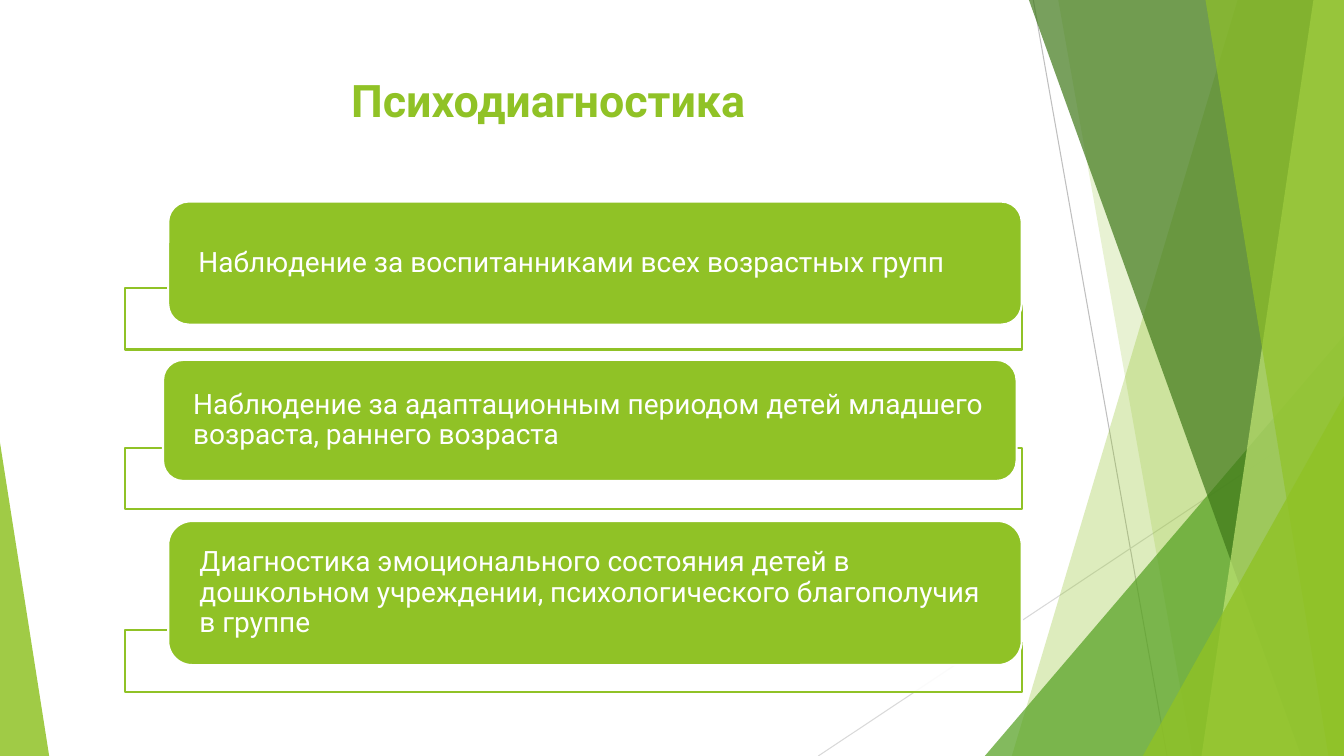
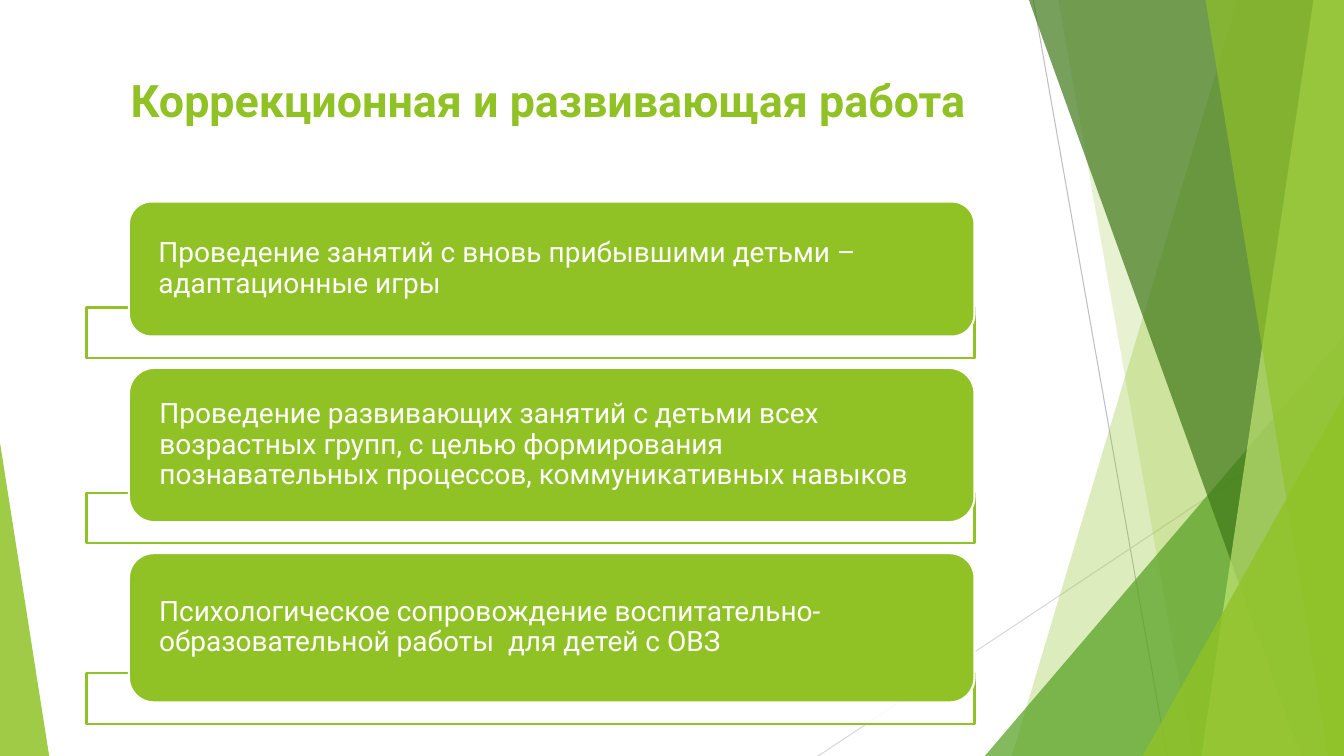
from lxml.etree import SubElement as Sub
from pptx import Presentation as Deck
from pptx.dml.color import RGBColor as Rgb
from pptx.enum.shapes import MSO_CONNECTOR as Link, MSO_SHAPE as Form
from pptx.enum.text import MSO_ANCHOR as Anchor, MSO_AUTO_SIZE as Fit, PP_ALIGN as Align
from pptx.oxml.ns import qn
from pptx.util import Cm, Pt

WIDE, HIGH = 33.87, 19.05
FONT = "Roboto"
HUES = {
    "lime": "90C226",
    "pale": "C0E474",
    "leaf": "54A021",
    "pine": "3F7819",
    "white": "FFFFFF",
    "gray": "BFBFBF",
    "mist": "D9D9D9",
}

# Start and end points of the thin lines
RAYS = [
    ((26.04, 0), (29.41, HIGH), "gray"),
    ((WIDE, 10.24), (20.62, HIGH), "mist"),
]

# Bands: top x, bottom x. Wedges: left, top, width, apex (0 left, 1 right).
# Both end with hue and opacity in percent.
SHARDS = [
    ("band", (31.19, 25.5), "lime", 30),
    ("band", (26.67, 30.05), "lime", 20),
    ("wedge", (24.82, 8.46, 9.05, 1), "leaf", 72),
    ("band", (25.93, 32.79), "pine", 70),
    ("band", (33.1, 30.28), "pale", 70),
    ("band", (30.38, 33.48), "lime", 65),
    ("wedge", (28.8, 9.98, 5.07, 1), "lime", 80),
    ("wedge", (0, 11.15, 1.24, 0), "lime", 85),
]

# Frame: left, width, height. Rows: card left, top, height, frame top, text.
PAGES = [
    {
        "title": "Психодиагностика",
        "frame": (3.15, 22.61, 1.55),
        "width": 21.51,
        "inset": 0.61,
        "rows": [
            (4.24, 5.08, 3.1, 7.26,
             "Наблюдение за воспитанниками всех возрастных групп"),
            (4.11, 9.07, 3.05, 11.28,
             "Наблюдение за адаптационным периодом детей младшего возраста, "
             "раннего возраста"),
            (4.24, 13.13, 3.63, 15.88,
             "Диагностика эмоционального состояния детей в дошкольном "
             "учреждении, психологического благополучия в группе"),
        ],
    },
    {
        "title": "Коррекционная и развивающая работа",
        "frame": (2.18, 22.38, 1.27),
        "width": 21.31,
        "inset": 0.58,
        "rows": [
            (3.25, 5.08, 3.4, 7.75,
             "Проведение занятий с вновь прибывшими детьми – адаптационные игры"),
            (3.25, 9.27, 3.89, 12.42,
             "Проведение развивающих занятий с детьми всех возрастных групп, "
             "с целью формирования познавательных процессов, "
             "коммуникативных навыков"),
            (3.25, 13.94, 3.76, 16.97,
             "Психологическое сопровождение воспитательно-образовательной "
             "работы  для детей с ОВЗ"),
        ],
    },
]


def hue(name):
    return Rgb.from_string(HUES[name])


def paint(shape, fill, alpha=100, line=None):
    shape.shadow.inherit = False
    shape.fill.solid()
    shape.fill.fore_color.rgb = hue(fill)
    if alpha < 100:
        color = shape.element.find(".//" + qn("a:srgbClr"))
        Sub(color, qn("a:alpha")).set("val", str(alpha * 1000))
    if line:
        shape.line.color.rgb = hue(line)
        shape.line.width = Pt(1.5)
    else:
        shape.line.fill.background()


def block(shapes, form, left, top, width, height):
    return shapes.add_shape(form, Cm(left), Cm(top), Cm(width), Cm(height))


def ray(shapes, start, end, color):
    points = [Cm(n) for n in start + end]
    line = shapes.add_connector(Link.STRAIGHT, *points)
    line.line.color.rgb = hue(color)
    line.line.width = Pt(0.75)
    Sub(line.element.spPr, qn("a:effectLst"))


def band(shapes, top, base):
    """Fill the height of the slide from a slanted edge to the right side."""
    pen = shapes.build_freeform(Cm(top), 0)
    ends = [(WIDE, 0), (WIDE, HIGH), (base, HIGH)]
    pen.add_line_segments([(Cm(x), Cm(y)) for x, y in ends])
    return pen.convert_to_shape()


def wedge(shapes, left, top, width, apex):
    shape = block(shapes, Form.ISOSCELES_TRIANGLE, left, top, width, HIGH - top)
    shape.adjustments[0] = apex
    return shape


def adorn(layout, slide):
    """Draw the backdrop on the slide, then move it to the layout."""
    kinds = {"band": band, "wedge": wedge}
    for start, end, color in RAYS:
        ray(slide.shapes, start, end, color)
    for kind, place, color, alpha in SHARDS:
        paint(kinds[kind](slide.shapes, *place), color, alpha)
    parts = [s for s in slide.shapes if not s.is_placeholder]
    for num, part in enumerate(parts, 100):
        part.element.find(".//" + qn("p:cNvPr")).set("id", str(num))
        layout.shapes.element.append(part.element)


def set_title(layout):
    title = layout.placeholders[0]
    title.left, title.top = Cm(1.88), Cm(1.7)
    title.width, title.height = Cm(23.88), Cm(3.66)
    title.text_frame.vertical_anchor = Anchor.TOP
    title.text_frame.auto_size = Fit.NONE


def style(para, size, color, align, bold=False):
    para.alignment = align
    font = para.font
    font.name, font.size, font.bold = FONT, Pt(size), bold
    font.color.rgb = hue(color)


def card(shapes, place, text, inset):
    shape = block(shapes, Form.ROUNDED_RECTANGLE, *place)
    paint(shape, "lime", line="white")
    frame = shape.text_frame
    frame.word_wrap = True
    frame.vertical_anchor = Anchor.MIDDLE
    frame.margin_left = frame.margin_right = Cm(inset)
    frame.margin_top = frame.margin_bottom = 0
    frame.text = text
    para = frame.paragraphs[0]
    para.line_spacing = 0.9
    style(para, 20, "white", Align.LEFT)


def fill_page(slide, page):
    title = slide.shapes.title.text_frame
    title.text = page["title"]
    style(title.paragraphs[0], 32, "lime", Align.CENTER, True)
    edge, span, depth = page["frame"]
    for left, top, height, base, text in page["rows"]:
        frame = block(slide.shapes, Form.RECTANGLE, edge, base, span, depth)
        paint(frame, "white", 90, "lime")
        place = (left, top, page["width"], height)
        card(slide.shapes, place, text, page["inset"])


def main():
    deck = Deck()
    deck.slide_width, deck.slide_height = Cm(WIDE), Cm(HIGH)
    layout = deck.slide_layouts[5]
    set_title(layout)
    slides = [deck.slides.add_slide(layout) for _ in PAGES]
    adorn(layout, slides[0])
    for slide, page in zip(slides, PAGES):
        fill_page(slide, page)
    deck.save("out.pptx")


if __name__ == "__main__":
    main()
